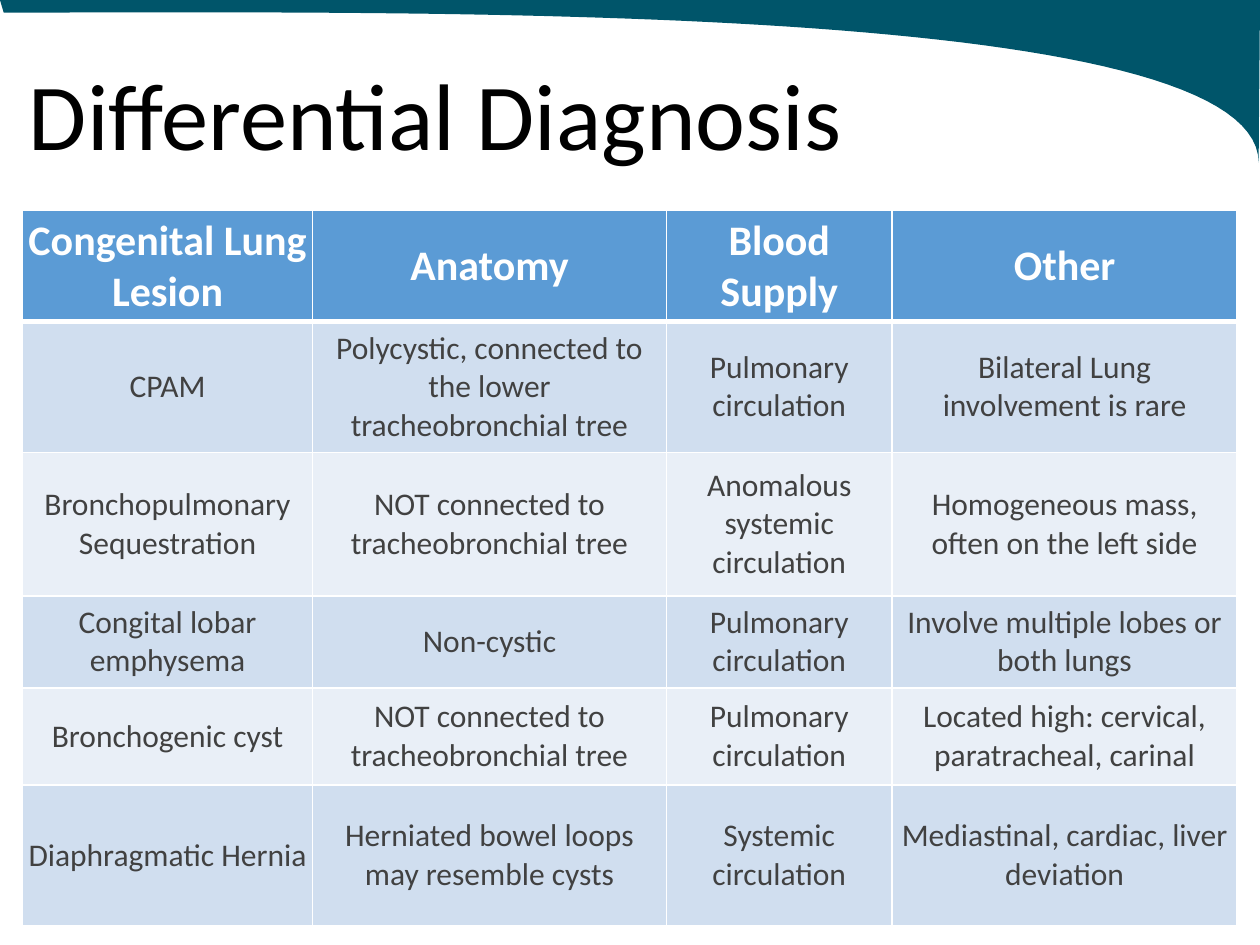
"""Build the Differential Diagnosis slide with its comparison table."""
from lxml import etree
from pptx import Presentation
from pptx.dml.color import RGBColor
from pptx.enum import text
from pptx.oxml import ns
from pptx.util import Inches, Pt

FONT = "Calibri"
TEAL = RGBColor(0x00, 0x55, 0x6A)
BLACK = RGBColor(0x00, 0x00, 0x00)
WHITE = RGBColor(0xFF, 0xFF, 0xFF)
HEADER_BLUE = RGBColor(0x5B, 0x9B, 0xD5)
BANDS = [RGBColor(0xD0, 0xDE, 0xEF), RGBColor(0xE9, 0xEF, 0xF7)]
GREY = RGBColor(0x41, 0x41, 0x41)

TITLE = "Differential Diagnosis"
ROWS = [
    ("Congenital Lung Lesion", "Anatomy", "Blood Supply", "Other"),
    ("CPAM", "Polycystic, connected to the lower tracheobronchial tree",
     "Pulmonary circulation", "Bilateral Lung involvement is rare"),
    ("Bronchopulmonary Sequestration", "NOT connected to tracheobronchial tree",
     "Anomalous systemic circulation", "Homogeneous mass, often on the left side"),
    ("Congital lobar emphysema", "Non-cystic",
     "Pulmonary circulation", "Involve multiple lobes or both lungs"),
    ("Bronchogenic cyst", "NOT connected to tracheobronchial tree",
     "Pulmonary circulation", "Located high: cervical, paratracheal, carinal"),
    ("Diaphragmatic Hernia", "Herniated bowel loops may resemble cysts",
     "Systemic circulation", "Mediastinal, cardiac, liver deviation"),
]
COLUMN_WIDTHS = [2.3, 2.81, 1.79, 2.74]
ROW_HEIGHTS = [0.72, 1.04, 1.14, 0.73, 0.77, 1.12]
SWOOSH_CURVES = [
    [(10, 0), (10, 0.14), (9.99, 1.15), (9.99, 1.29)],
    [(9.99, 1.29), (9.98, 0), (3.36, 0.1), (0.03, 0.1)],
]
CURVE_STEPS = 60


def curve_points(controls):
    points = []
    for step in range(CURVE_STEPS + 1):
        t = step / CURVE_STEPS
        weights = [(1 - t) ** 3, 3 * t * (1 - t) ** 2, 3 * t ** 2 * (1 - t), t ** 3]
        points.append(tuple(
            Inches(sum(weight * point[axis] for weight, point in zip(weights, controls)))
            for axis in (0, 1)))
    return points


def add_swoosh(slide):
    builder = slide.shapes.build_freeform(0, 0)
    for controls in SWOOSH_CURVES:
        builder.add_line_segments(curve_points(controls), close=False)
    builder.add_line_segments([(0, 0)], close=True)
    shape = builder.convert_to_shape()
    shape.shadow.inherit = False
    shape.fill.solid()
    shape.fill.fore_color.rgb = TEAL
    shape.line.fill.background()


def format_paragraph(paragraph, size, color, bold=False):
    font = paragraph.font
    font.name, font.size, font.bold = FONT, Pt(size), bold
    font.color.rgb = color


def add_title(slide):
    box = slide.shapes.add_textbox(Inches(0.18), Inches(0.4), Inches(9.14), Inches(1.1))
    frame = box.text_frame
    frame.word_wrap = True
    frame.vertical_anchor = text.MSO_ANCHOR.MIDDLE
    frame.margin_left = frame.margin_right = Inches(0.05)
    frame.margin_top = frame.margin_bottom = Inches(0.04)
    frame.text = TITLE
    frame.paragraphs[0].line_spacing = 0.9
    format_paragraph(frame.paragraphs[0], 54, BLACK)


def set_borders(cell, widths):
    properties = cell._tc.get_or_add_tcPr()
    for index, (side, width) in enumerate(widths.items()):
        line = etree.Element(ns.qn(f"a:ln{side}"), w=str(Pt(width)))
        fill = etree.SubElement(line, ns.qn("a:solidFill"))
        etree.SubElement(fill, ns.qn("a:srgbClr"), val=str(WHITE))
        properties.insert(index, line)


def add_lesion_table(slide):
    table = slide.shapes.add_table(
        len(ROWS), len(COLUMN_WIDTHS), Inches(0.18), Inches(1.67),
        Inches(sum(COLUMN_WIDTHS)), Inches(sum(ROW_HEIGHTS))).table
    for column, width in zip(table.columns, COLUMN_WIDTHS):
        column.width = Inches(width)
    for row_index, (row, height, values) in enumerate(zip(table.rows, ROW_HEIGHTS, ROWS)):
        row.height = Inches(height)
        header = row_index == 0
        for cell, value in zip(row.cells, values):
            cell.text_frame.text = value
            cell.vertical_anchor = text.MSO_ANCHOR.MIDDLE
            cell.margin_left = cell.margin_right = Inches(0.04)
            cell.margin_top = cell.margin_bottom = Inches(0.04)
            cell.fill.solid()
            cell.fill.fore_color.rgb = HEADER_BLUE if header else BANDS[(row_index - 1) % 2]
            set_borders(cell, {"L": 1, "R": 1, "T": 3 if row_index == 1 else 1,
                               "B": 3 if header else 1})
            paragraph = cell.text_frame.paragraphs[0]
            paragraph.alignment = text.PP_ALIGN.CENTER
            format_paragraph(paragraph, 24 if header else 18, WHITE if header else GREY, header)


def main():
    presentation = Presentation()
    presentation.slide_width, presentation.slide_height = Inches(10), Inches(7.5)
    slide = presentation.slides.add_slide(presentation.slide_layouts[6])
    add_swoosh(slide)
    add_title(slide)
    add_lesion_table(slide)
    presentation.save("out.pptx")


if __name__ == "__main__":
    main()
